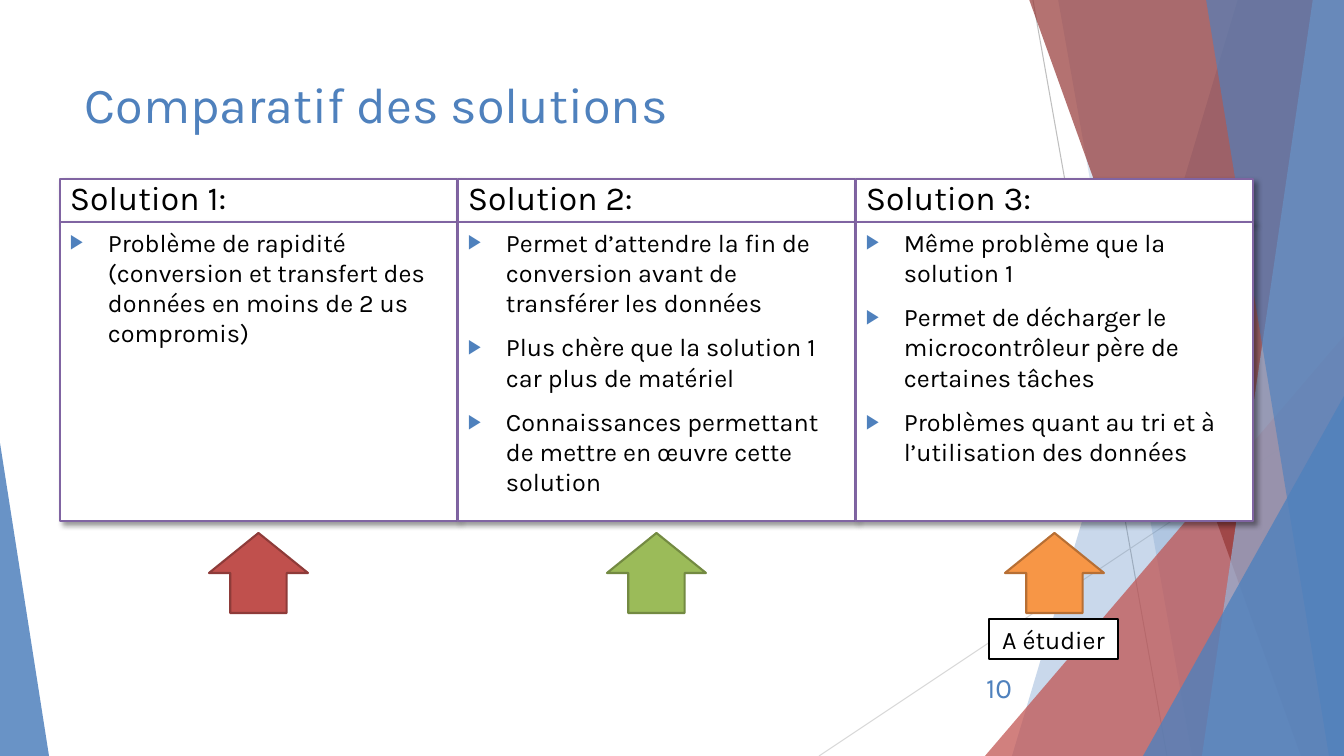
import lxml.etree
import pptx
import pptx.dml.color
import pptx.enum.shapes
import pptx.enum.text
import pptx.oxml.ns
import pptx.util

PX = 914400 / 100.8
SHAPE = pptx.enum.shapes.MSO_SHAPE
ALIGN = pptx.enum.text.PP_ALIGN
ANCHOR = pptx.enum.text.MSO_ANCHOR

THEME = {
    "font": "Karla",
    "title": 36, "heading": 24, "body": 18, "number": 20,
    "blue": "4F81BD", "pale_blue": "95B3D7", "red": "C0504D", "dark_red": "953735",
    "green": "9BBB59", "orange": "F79646", "purple": "8064A2",
    "red_edge": "8E3B39", "green_edge": "738A42", "orange_edge": "B76F34",
    "white": "FFFFFF", "black": "000000", "grey": "BFBFBF", "light_grey": "D9D9D9",
}

RAYS = [((1033, 0), (1167, 756), "grey"), ((1344, 406), (819, 756), "light_grey")]
BACK_BANDS = [
    ([(1238, -1), (1344, -1), (1344, 756), (1012, 756)], "blue", 30),
    ([(1058, -1), (1344, -1), (1344, 756), (1192, 756)], "blue", 20),
]
FRONT_BANDS = [
    ([(1029, -1), (1344, -1), (1344, 756), (1301, 756)], "dark_red", 70),
    ([(1313, -1), (1344, -1), (1344, 756), (1202, 756)], "pale_blue", 70),
    ([(1206, -1), (1344, -1), (1344, 756), (1329, 756)], "blue", 65),
]
BACK_CORNER = ((985, 336, 359, 420), 1, "red", 72)
FRONT_CORNERS = [
    ((1143, 396, 201, 360), 1, "blue", 80),
    ((0, 443, 49, 313), 0, "blue", 85),
]

SOLUTIONS = [
    ("Solution 1:", [
        "Problème de rapidité (conversion et transfert des données en moins de 2 us compromis)",
    ], "red"),
    ("Solution 2:", [
        "Permet d’attendre la fin de conversion avant de transférer les données",
        "Plus chère que la solution 1 car plus de matériel",
        "Connaissances permettant de mettre en œuvre cette solution",
    ], "green"),
    ("Solution 3:", [
        "Même problème que la solution 1",
        "Permet de décharger le microcontrôleur père de certaines tâches",
        "Problèmes quant au tri et à l’utilisation des données",
    ], "orange"),
]
COLUMN_LEFT, COLUMN_PITCH, COLUMN_WIDTH = 60, 398, 397
ARROW_WIDTH = 99


def px(*lengths):
    return [round(length * PX) for length in lengths]


def rgb(name):
    return pptx.dml.color.RGBColor.from_string(THEME[name])


def apply_format(target, values):
    for name, value in values.items():
        setattr(target, name, value)


def add_xml(parent, tag, **attributes):
    return lxml.etree.SubElement(parent, pptx.oxml.ns.qn(tag), attributes)


def paint(shape, fill, edge=None, opacity=100):
    shape.shadow.inherit = False
    shape.fill.solid()
    shape.fill.fore_color.rgb = rgb(fill)
    if opacity < 100:
        color = shape.fill._xPr.find(".//" + pptx.oxml.ns.qn("a:srgbClr"))
        add_xml(color, "a:alpha", val=str(opacity * 1000))
    if edge:
        shape.line.color.rgb = rgb(edge)
        shape.line.width = pptx.util.Pt(1.5)
    else:
        shape.line.fill.background()


def add_ray(slide, start, end, color):
    ray = slide.shapes.add_connector(
        pptx.enum.shapes.MSO_CONNECTOR.STRAIGHT, *px(*start, *end))
    ray.line.color.rgb = rgb(color)
    ray.line.width = pptx.util.Pt(0.75)
    add_xml(ray._element.spPr, "a:effectLst")


def add_band(slide, corners, color, opacity):
    outline = slide.shapes.build_freeform(*corners[0], scale=PX)
    outline.add_line_segments(corners[1:], close=True)
    paint(outline.convert_to_shape(), color, opacity=opacity)


def add_corner(slide, box, apex, color, opacity):
    corner = slide.shapes.add_shape(SHAPE.ISOSCELES_TRIANGLE, *px(*box))
    corner.adjustments[0] = apex
    paint(corner, color, opacity=opacity)


def add_shadow(shape):
    effects = shape._element.spPr.find(pptx.oxml.ns.qn("a:effectLst"))
    shadow = add_xml(effects, "a:outerShdw", blurRad="50800", dist="38100",
                     dir="2700000", algn="tl", rotWithShape="0")
    color = add_xml(shadow, "a:srgbClr", val=THEME["black"])
    add_xml(color, "a:alpha", val="40000")


def add_bullet(paragraph):
    properties = paragraph._p.get_or_add_pPr()
    indent = px(38)[0]
    properties.set("marL", str(indent))
    properties.set("indent", str(-indent))
    color = add_xml(properties, "a:buClr")
    add_xml(color, "a:srgbClr", val=THEME["blue"])
    add_xml(properties, "a:buSzPct", val="80000")
    add_xml(properties, "a:buFont", typeface="Arial")
    add_xml(properties, "a:buChar", char="▶")


def write(shape, lines, size, color="black", align=ALIGN.LEFT,
          anchor=ANCHOR.TOP, bulleted=False):
    frame = shape.text_frame
    apply_format(frame, {"word_wrap": True, "vertical_anchor": anchor})
    for index, line in enumerate(lines):
        paragraph = frame.paragraphs[0] if index == 0 else frame.add_paragraph()
        paragraph.alignment = align
        if index:
            paragraph.space_before = pptx.util.Pt(10)
        if bulleted:
            add_bullet(paragraph)
        run = paragraph.add_run()
        run.text = line
        apply_format(run.font, {"name": THEME["font"], "size": pptx.util.Pt(THEME[size])})
        run.font.color.rgb = rgb(color)


def add_label(slide, box, text, size, **layout):
    write(slide.shapes.add_textbox(*px(*box)), [text], size, "blue", **layout)


def add_panel(slide, box, edge="purple", raised=True):
    panel = slide.shapes.add_shape(SHAPE.RECTANGLE, *px(*box))
    paint(panel, "white", edge)
    if raised:
        add_shadow(panel)
    return panel


def add_verdict_arrow(slide, left, color):
    arrow = slide.shapes.add_shape(SHAPE.UP_ARROW, *px(left, 533, ARROW_WIDTH, 80))
    arrow.adjustments[0] = 0.57
    arrow.adjustments[1] = 0.5
    paint(arrow, color, color + "_edge")


def add_solution(slide, left, heading, points, color):
    heading_panel = add_panel(slide, (left, 179, COLUMN_WIDTH, 43))
    write(heading_panel, [heading], "heading", anchor=ANCHOR.BOTTOM)
    points_panel = add_panel(slide, (left, 222, COLUMN_WIDTH, 299))
    write(points_panel, points, "body", bulleted=True)
    add_verdict_arrow(slide, left + (COLUMN_WIDTH - ARROW_WIDTH) // 2, color)


def add_backdrop(slide):
    for ray in RAYS:
        add_ray(slide, *ray)
    for band in BACK_BANDS:
        add_band(slide, *band)
    add_corner(slide, *BACK_CORNER)
    for band in FRONT_BANDS:
        add_band(slide, *band)
    for corner in FRONT_CORNERS:
        add_corner(slide, *corner)


def main():
    deck = pptx.Presentation()
    width, height = px(1344, 756)
    apply_format(deck, {"slide_width": width, "slide_height": height})
    slide = deck.slides.add_slide(deck.slide_layouts[6])
    add_backdrop(slide)
    add_label(slide, (75, 68, 948, 145), "Comparatif des solutions", "title")
    for index, solution in enumerate(SOLUTIONS):
        add_solution(slide, COLUMN_LEFT + index * COLUMN_PITCH, *solution)
    study_note = add_panel(slide, (989, 619, 129, 40), "black", raised=False)
    write(study_note, ["A étudier"], "body", align=ALIGN.CENTER)
    add_label(slide, (947, 667, 75, 40), "10", "number",
              align=ALIGN.RIGHT, anchor=ANCHOR.MIDDLE)
    deck.save("out.pptx")


if __name__ == "__main__":
    main()
